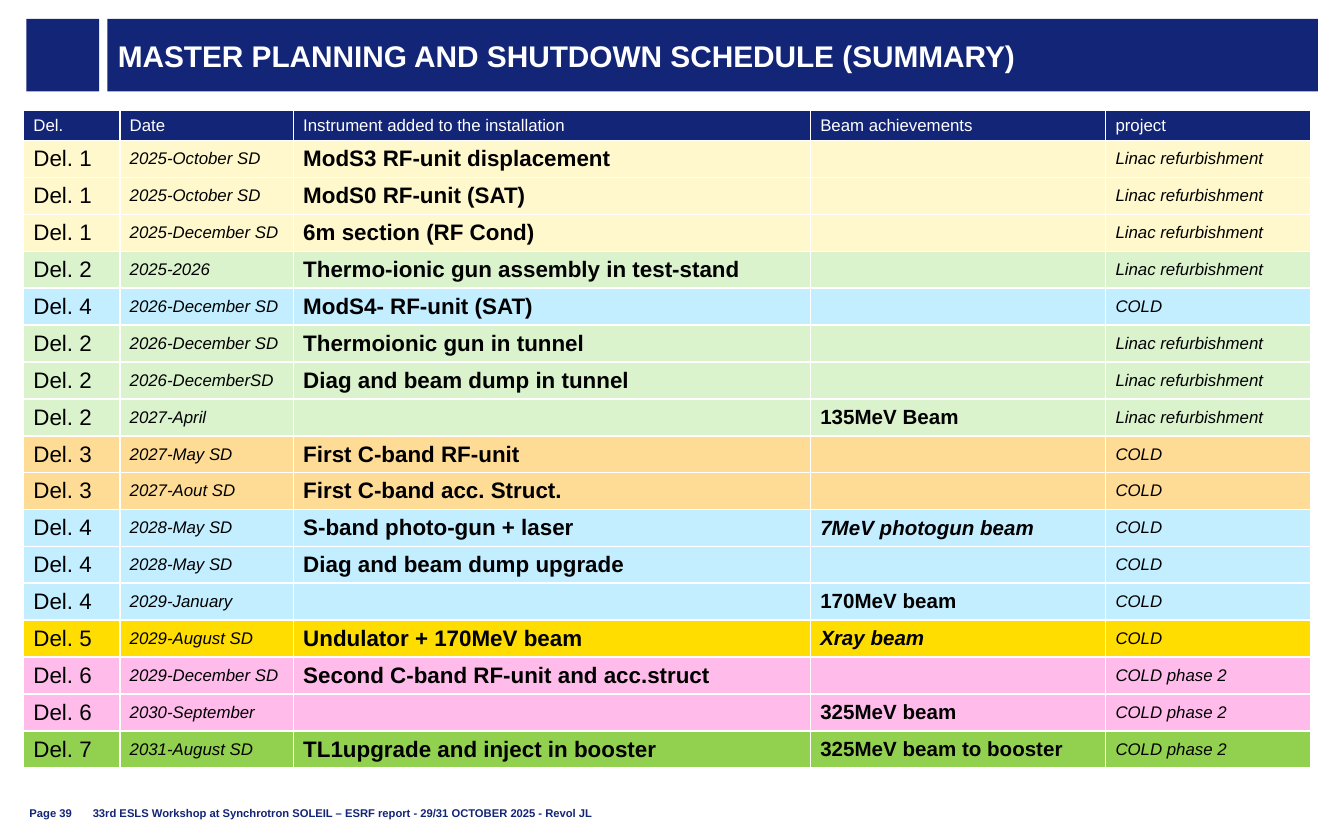
from typing import NamedTuple

from pptx import Presentation
from pptx.dml.color import RGBColor
from pptx.enum.shapes import MSO_SHAPE
from pptx.enum.text import MSO_ANCHOR, MSO_AUTO_SIZE, PP_ALIGN
from pptx.util import Pt

RECTANGLE = MSO_SHAPE.RECTANGLE
MIDDLE = MSO_ANCHOR.MIDDLE
BOTTOM = MSO_ANCHOR.BOTTOM
LEFT = PP_ALIGN.LEFT
NO_AUTOFIT = MSO_AUTO_SIZE.NONE

FONT = "Arial"
NAVY = RGBColor(0x13, 0x25, 0x77)
WHITE = RGBColor(0xFF, 0xFF, 0xFF)
BLACK = RGBColor(0x00, 0x00, 0x00)
DELIVERY_FILLS = {
    1: RGBColor(0xFF, 0xF8, 0xCC),
    2: RGBColor(0xDA, 0xF3, 0xCD),
    3: RGBColor(0xFF, 0xDC, 0x95),
    4: RGBColor(0xC3, 0xEE, 0xFF),
    5: RGBColor(0xFF, 0xDD, 0x00),
    6: RGBColor(0xFF, 0xBC, 0xEB),
    7: RGBColor(0x92, 0xD0, 0x50),
}


class TextStyle(NamedTuple):
    size: float
    color: RGBColor = BLACK
    bold: bool = False
    italic: bool = False


class Column(NamedTuple):
    heading: str
    width: float
    style: TextStyle


class Milestone(NamedTuple):
    delivery: int
    date: str
    instrument: str
    beam: str
    project: str
    beam_italic: bool = False


class FooterText(NamedTuple):
    text: str
    left: float
    width: float


TITLE_STYLE = TextStyle(16, WHITE, bold=True)
HEADING_STYLE = TextStyle(9, WHITE)
FOOTER_STYLE = TextStyle(6, NAVY, bold=True)
DETAIL_STYLE = TextStyle(9, italic=True)
BEAM_COLUMN = 3

COLUMNS = [
    Column("Del.", 51.6, TextStyle(12)),
    Column("Date", 93, DETAIL_STYLE),
    Column("Instrument added to the installation", 277, TextStyle(12, bold=True)),
    Column("Beam achievements", 158.2, TextStyle(11, bold=True)),
    Column("project", 110, DETAIL_STYLE),
]

LINAC = "Linac refurbishment"
COLD = "COLD"
COLD_2 = "COLD phase 2"
MILESTONES = [
    Milestone(1, "2025-October SD", "ModS3 RF-unit displacement", "", LINAC),
    Milestone(1, "2025-October SD", "ModS0 RF-unit (SAT)", "", LINAC),
    Milestone(1, "2025-December SD", "6m section (RF Cond)", "", LINAC),
    Milestone(2, "2025-2026", "Thermo-ionic gun assembly in test-stand", "", LINAC),
    Milestone(4, "2026-December SD", "ModS4- RF-unit (SAT)", "", COLD),
    Milestone(2, "2026-December SD", "Thermoionic gun in tunnel", "", LINAC),
    Milestone(2, "2026-DecemberSD", "Diag and beam dump in tunnel", "", LINAC),
    Milestone(2, "2027-April", "", "135MeV Beam", LINAC),
    Milestone(3, "2027-May SD", "First C-band RF-unit", "", COLD),
    Milestone(3, "2027-Aout SD", "First C-band acc. Struct.", "", COLD),
    Milestone(4, "2028-May SD", "S-band photo-gun + laser", "7MeV photogun beam", COLD, True),
    Milestone(4, "2028-May SD", "Diag and beam dump upgrade", "", COLD),
    Milestone(4, "2029-January", "", "170MeV beam", COLD),
    Milestone(5, "2029-August SD", "Undulator + 170MeV beam", "Xray beam", COLD, True),
    Milestone(6, "2029-December SD", "Second C-band RF-unit and acc.struct", "", COLD_2),
    Milestone(6, "2030-September", "", "325MeV beam", COLD_2),
    Milestone(7, "2031-August SD", "TL1upgrade and inject in booster", "325MeV beam to booster", COLD_2),
]

FOOTERS = [
    FooterText("Page 39", 15.8, 32.4),
    FooterText(
        "33rd ESLS Workshop at Synchrotron SOLEIL – ESRF report - 29/31 OCTOBER 2025 - Revol JL",
        49.7,
        481.7,
    ),
]

BANNER_TOP = 10.1
BANNER_HEIGHT = 38.9
TABLE_LEFT = 12.6
TABLE_TOP = 59.2
HEADING_HEIGHT = 16.2
ROW_HEIGHT = 19.78


def style_paragraph(paragraph, style: TextStyle) -> None:
    paragraph.alignment = LEFT
    font = paragraph.font
    font.name = FONT
    font.size = Pt(style.size)
    font.bold = style.bold
    font.italic = style.italic
    font.color.rgb = style.color


def place(shape, left: float, top: float, width: float, height: float) -> None:
    shape.left, shape.top = Pt(left), Pt(top)
    shape.width, shape.height = Pt(width), Pt(height)


def fill_frame(frame, text: str, style: TextStyle, anchor, side_margin: float) -> None:
    frame.word_wrap = True
    frame.auto_size = NO_AUTOFIT
    frame.vertical_anchor = anchor
    frame.margin_left = frame.margin_right = Pt(side_margin)
    frame.margin_top = frame.margin_bottom = Pt(0)
    frame.text = text
    style_paragraph(frame.paragraphs[0], style)


def add_banner(slide) -> None:
    square = slide.shapes.add_shape(
        RECTANGLE, Pt(14.2), Pt(BANNER_TOP), Pt(BANNER_HEIGHT), Pt(BANNER_HEIGHT)
    )
    square.shadow.inherit = False
    square.fill.solid()
    square.fill.fore_color.rgb = NAVY
    square.line.fill.background()

    title = slide.shapes.title
    place(title, 57.5, BANNER_TOP, 648.5, BANNER_HEIGHT)
    title.fill.solid()
    title.fill.fore_color.rgb = NAVY
    text = "MASTER PLANNING AND SHUTDOWN SCHEDULE (SUMMARY)"
    fill_frame(title.text_frame, text, TITLE_STYLE, MIDDLE, 5.6)


def fill_cell(cell, text: str, style: TextStyle, fill: RGBColor) -> None:
    cell.fill.solid()
    cell.fill.fore_color.rgb = fill
    cell.vertical_anchor = MIDDLE
    cell.margin_left = cell.margin_right = Pt(5.3)
    cell.margin_top = cell.margin_bottom = Pt(2.7)
    cell.text = text
    style_paragraph(cell.text_frame.paragraphs[0], style)


def add_schedule(slide) -> None:
    width = sum(column.width for column in COLUMNS)
    height = HEADING_HEIGHT + ROW_HEIGHT * len(MILESTONES)
    table = slide.shapes.add_table(
        len(MILESTONES) + 1, len(COLUMNS), Pt(TABLE_LEFT), Pt(TABLE_TOP), Pt(width), Pt(height)
    ).table
    table.horz_banding = False
    table.rows[0].height = Pt(HEADING_HEIGHT)
    for index, column in enumerate(COLUMNS):
        table.columns[index].width = Pt(column.width)
        fill_cell(table.cell(0, index), column.heading, HEADING_STYLE, NAVY)
    for row, milestone in enumerate(MILESTONES, start=1):
        table.rows[row].height = Pt(ROW_HEIGHT)
        texts = [f"Del. {milestone.delivery}", *milestone[1:5]]
        for index, (text, column) in enumerate(zip(texts, COLUMNS)):
            style = column.style
            if index == BEAM_COLUMN:
                style = style._replace(italic=milestone.beam_italic)
            fill_cell(table.cell(row, index), text, style, DELIVERY_FILLS[milestone.delivery])


def add_footer(slide, footer: FooterText) -> None:
    box = slide.shapes.add_textbox(Pt(footer.left), Pt(425.5), Pt(footer.width), Pt(13.7))
    fill_frame(box.text_frame, footer.text, FOOTER_STYLE, BOTTOM, 0)


def main() -> None:
    presentation = Presentation()
    presentation.slide_width = Pt(720)
    presentation.slide_height = Pt(450)
    slide = presentation.slides.add_slide(presentation.slide_layouts[5])
    add_banner(slide)
    add_schedule(slide)
    for footer in FOOTERS:
        add_footer(slide, footer)
    presentation.save("out.pptx")


if __name__ == "__main__":
    main()
